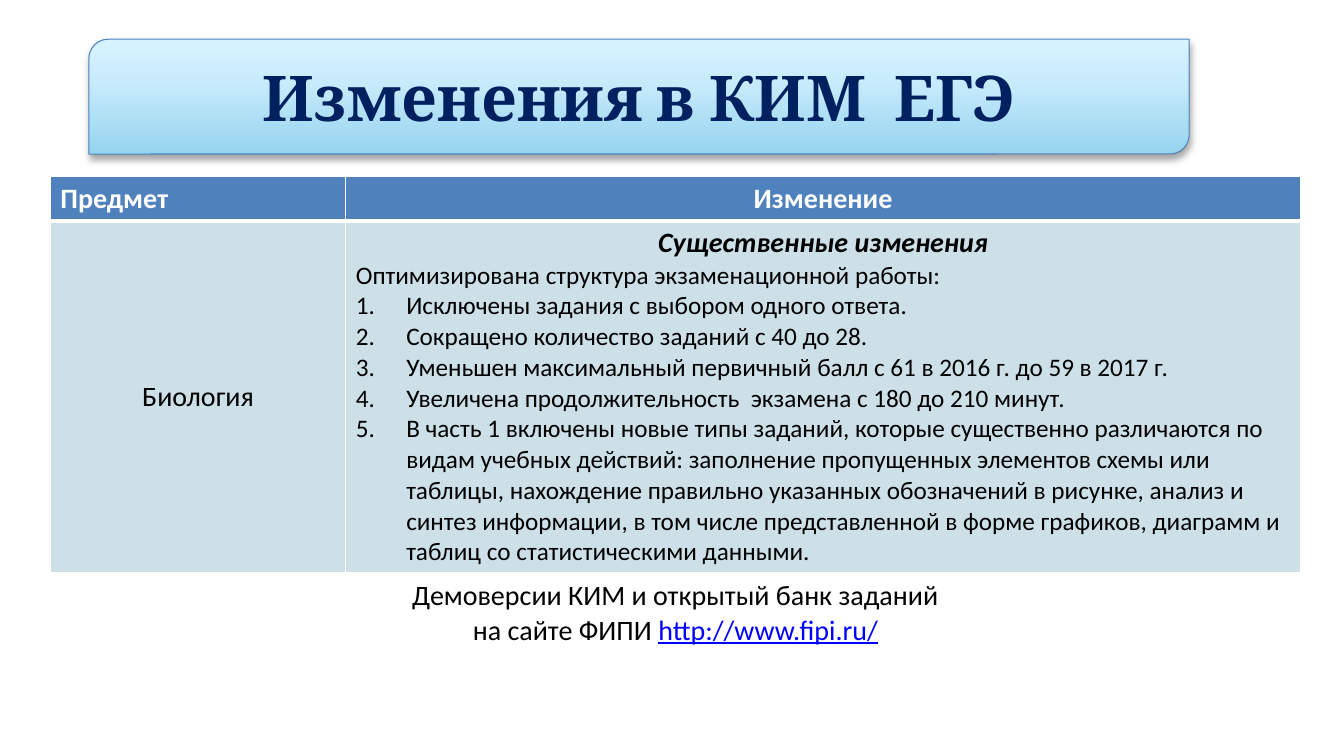
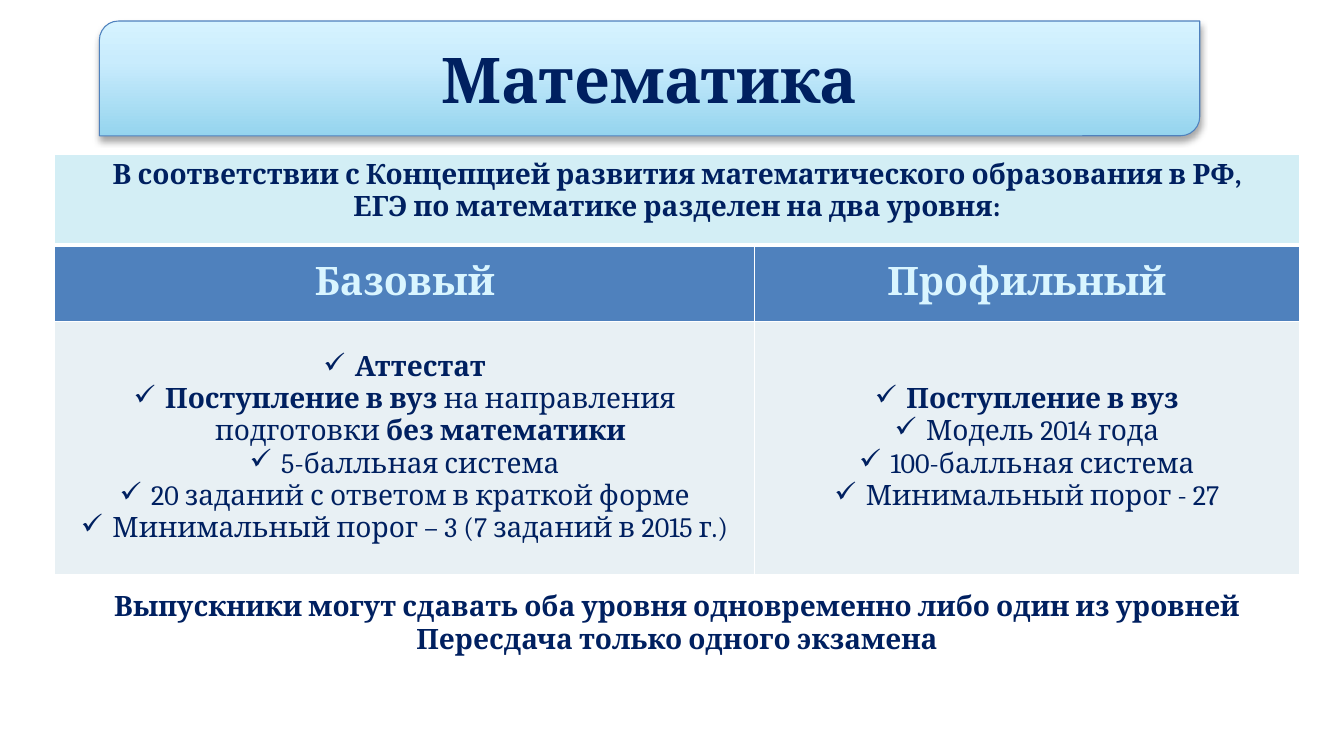
from dataclasses import dataclass, replace

from lxml import etree
from pptx import Presentation
from pptx.dml.color import RGBColor
from pptx.enum.shapes import MSO_SHAPE as Preset
from pptx.enum.text import MSO_ANCHOR as Anchor, PP_ALIGN as Align
from pptx.oxml.ns import qn
from pptx.util import Pt

# Shared look
WHITE, BLACK, NAVY, BLUE = "FFFFFF", "000000", "002060", "4F81BD"
LINK_BLUE, PALE_BLUE = "0000FF", "D9F5FF"
BODY_FILL, INTRO_FILL, LEVEL_FILL = "CDE0E8", "D3EEF5", "E8F0F4"
BANNER_STOPS = [(0, "95D4EE"), (65, "C9ECFD"), (100, "D6F3FF")]
BANNER_WIDTH, BANNER_HEIGHT = 786, 82
THIN, THICK = 1, 3


@dataclass(frozen=True)
class Style:
    font: str
    size: int
    color: str
    bold: bool = False
    italic: bool = False
    underline: bool = False


@dataclass(frozen=True)
class Paragraph:
    runs: list
    align: Align = Align.CENTER
    bullet: str = ""  # "1." numbers the paragraph, any other sign is drawn as is
    indent: float = 0


TITLE = Style("Cambria", 45, NAVY, bold=True)
PLAIN = Style("Calibri", 20, BLACK)
HEADING = replace(PLAIN, color=WHITE, bold=True)
SUBHEADING = replace(PLAIN, bold=True, italic=True)
SMALL = replace(PLAIN, size=18)
LINK = replace(PLAIN, color=LINK_BLUE, underline=True)
LEVEL_TEXT = Style("Cambria", 20, NAVY)
LEVEL_BOLD = replace(LEVEL_TEXT, bold=True)
LEVEL_NAME = replace(LEVEL_BOLD, size=28, color=PALE_BLUE)


def rgb(color):
    return RGBColor.from_string(color)


def add_node(parent, tag, **attributes):
    node = etree.SubElement(parent, qn(tag))
    for key, value in attributes.items():
        node.set(key, str(value))
    return node


# Paragraph kinds
def line(text, style, align=Align.CENTER):
    return Paragraph([(text, style)], align)


def numbered(text):
    return Paragraph([(text, SMALL)], Align.LEFT, "1.", 36)


def checked(*runs):
    return Paragraph(list(runs), bullet="✓", indent=22.5)


def set_bullet(paragraph, sign, indent):
    properties = paragraph._p.get_or_add_pPr()
    properties.set("marL", str(Pt(indent)))
    properties.set("indent", str(-Pt(indent)))
    if sign == "1.":
        add_node(properties, "a:buAutoNum", type="arabicPeriod")
    else:
        add_node(properties, "a:buChar", char=sign)


def write(frame, paragraphs):
    for number, content in enumerate(paragraphs):
        paragraph = frame.add_paragraph() if number else frame.paragraphs[0]
        paragraph.alignment = content.align
        if content.bullet:
            set_bullet(paragraph, content.bullet, content.indent)
        for text, style in content.runs:
            run = paragraph.add_run()
            run.text = text
            font = run.font
            font.name, font.size = style.font, Pt(style.size)
            font.bold, font.italic = style.bold, style.italic
            font.underline = style.underline
            font.color.rgb = rgb(style.color)


# Title banner
def add_banner(slide, left, top, title):
    banner = slide.shapes.add_shape(
        Preset.ROUND_2_DIAG_RECTANGLE,
        Pt(left), Pt(top), Pt(BANNER_WIDTH), Pt(BANNER_HEIGHT))
    banner.line.color.rgb = rgb(BLUE)
    banner.line.width = Pt(0.75)
    banner.fill.gradient()
    banner.fill.gradient_angle = 90
    properties = banner._element.spPr
    stops = properties.find(qn("a:gradFill")).find(qn("a:gsLst"))
    for stop in list(stops):
        stops.remove(stop)
    for position, color in BANNER_STOPS:
        stop = add_node(stops, "a:gs", pos=position * 1000)
        add_node(stop, "a:srgbClr", val=color)

    banner.shadow.inherit = False
    shadow = add_node(properties.find(qn("a:effectLst")), "a:outerShdw",
                      blurRad=Pt(5), dist=Pt(3), dir=90 * 60000, rotWithShape=0)
    shade = add_node(shadow, "a:srgbClr", val=BLACK)
    add_node(shade, "a:alpha", val=35000)

    frame = banner.text_frame
    frame.word_wrap = True
    frame.vertical_anchor = Anchor.MIDDLE
    write(frame, [line(title, TITLE)])


# Tables
def set_borders(cell, top, bottom):
    properties = cell._tc.get_or_add_tcPr()
    widths = {"a:lnL": THIN, "a:lnR": THIN, "a:lnT": top, "a:lnB": bottom}
    for place, (tag, width) in enumerate(widths.items()):
        border = add_node(properties, tag, w=Pt(width))
        add_node(add_node(border, "a:solidFill"), "a:srgbClr", val=WHITE)
        properties.insert(place, border)


def add_grid(slide, left, top, widths, heights, rows):
    """Each row is (fill, anchor, cells); a single cell spans the row."""
    table = slide.shapes.add_table(
        len(heights), len(widths), Pt(left), Pt(top),
        Pt(sum(widths)), Pt(sum(heights))).table
    table.first_row = table.horz_banding = False
    for column, width in zip(table.columns, widths):
        column.width = Pt(width)
    for number, (fill, anchor, contents) in enumerate(rows):
        table.rows[number].height = Pt(heights[number])
        cells = list(table.rows[number].cells)
        for cell in cells:
            if fill:
                cell.fill.solid()
                cell.fill.fore_color.rgb = rgb(fill)
            else:
                cell.fill.background()
            set_borders(cell, THICK if number == 1 else THIN,
                        THICK if number == 0 else THIN)
            cell.vertical_anchor = anchor
        if len(contents) == 1:
            cells[0].merge(cells[-1])
        for cell, paragraphs in zip(cells, contents):
            write(cell.text_frame, paragraphs)


# Slides
def build_changes(slide):
    changes = [
        line("Существенные изменения", SUBHEADING),
        line("Оптимизирована структура экзаменационной работы:", SMALL, Align.LEFT),
        numbered("Исключены задания с выбором одного ответа."),
        numbered("Сокращено количество заданий с 40 до 28."),
        numbered("Уменьшен максимальный первичный балл с 61 в 2016 г. до 59 в 2017 г."),
        numbered("Увеличена продолжительность  экзамена с 180 до 210 минут."),
        numbered("В часть 1 включены новые типы заданий, которые существенно "
                 "различаются по видам учебных действий: заполнение пропущенных "
                 "элементов схемы или таблицы, нахождение правильно указанных "
                 "обозначений в рисунке, анализ и синтез информации, в том числе "
                 "представленной в форме графиков, диаграмм и таблиц со "
                 "статистическими данными."),
    ]
    demo_versions = [
        line("Демоверсии КИМ и открытый банк заданий", PLAIN),
        Paragraph([("на сайте ФИПИ ", PLAIN), ("http://www.fipi.ru/", LINK)]),
    ]
    add_grid(slide, 36, 126, [211, 682], [31, 247, 58], [
        (BLUE, Anchor.TOP, [[line("Предмет", HEADING, Align.LEFT)],
                            [line("Изменение", HEADING)]]),
        (BODY_FILL, Anchor.MIDDLE, [[line("Биология", PLAIN)], changes]),
        (None, Anchor.MIDDLE, [demo_versions]),
    ])
    add_banner(slide, 63.5, 28, "Изменения в КИМ  ЕГЭ")


def build_mathematics(slide):
    intro = [
        line("В соответствии с Концепцией развития математического образования в РФ,",
             LEVEL_BOLD),
        line("ЕГЭ по математике разделен на два уровня:", LEVEL_BOLD),
    ]
    basic = [
        checked(("Аттестат", LEVEL_BOLD)),
        checked(("Поступление в вуз ", LEVEL_BOLD),
                ("на направления подготовки ", LEVEL_TEXT),
                ("без математики", LEVEL_BOLD)),
        checked(("5-балльная система", LEVEL_TEXT)),
        checked(("20 заданий с ответом в краткой форме", LEVEL_TEXT)),
        checked(("Минимальный порог – 3 (7 заданий в 2015 г.)", LEVEL_TEXT)),
    ]
    advanced = [
        checked(("Поступление в вуз", LEVEL_BOLD)),
        checked(("Модель 2014 года", LEVEL_TEXT)),
        checked(("100-балльная система", LEVEL_TEXT)),
        checked(("Минимальный порог - 27", LEVEL_TEXT)),
    ]
    retake = [
        line("Выпускники могут сдавать оба уровня одновременно либо один из уровней",
             LEVEL_BOLD),
        line("Пересдача только одного экзамена", LEVEL_BOLD),
    ]
    add_grid(slide, 39, 110, [500, 389], [65, 54.5, 181, 70.5], [
        (INTRO_FILL, Anchor.TOP, [intro]),
        (BLUE, Anchor.MIDDLE, [[line("Базовый", LEVEL_NAME)],
                               [line("Профильный", LEVEL_NAME)]]),
        (LEVEL_FILL, Anchor.MIDDLE, [basic, advanced]),
        (None, Anchor.MIDDLE, [retake]),
    ])
    add_banner(slide, 71, 15, "Математика")


def main():
    deck = Presentation()
    deck.slide_width, deck.slide_height = Pt(960), Pt(540)
    blank = deck.slide_layouts[6]
    for build in (build_changes, build_mathematics):
        build(deck.slides.add_slide(blank))
    deck.save("out.pptx")


if __name__ == "__main__":
    main()
